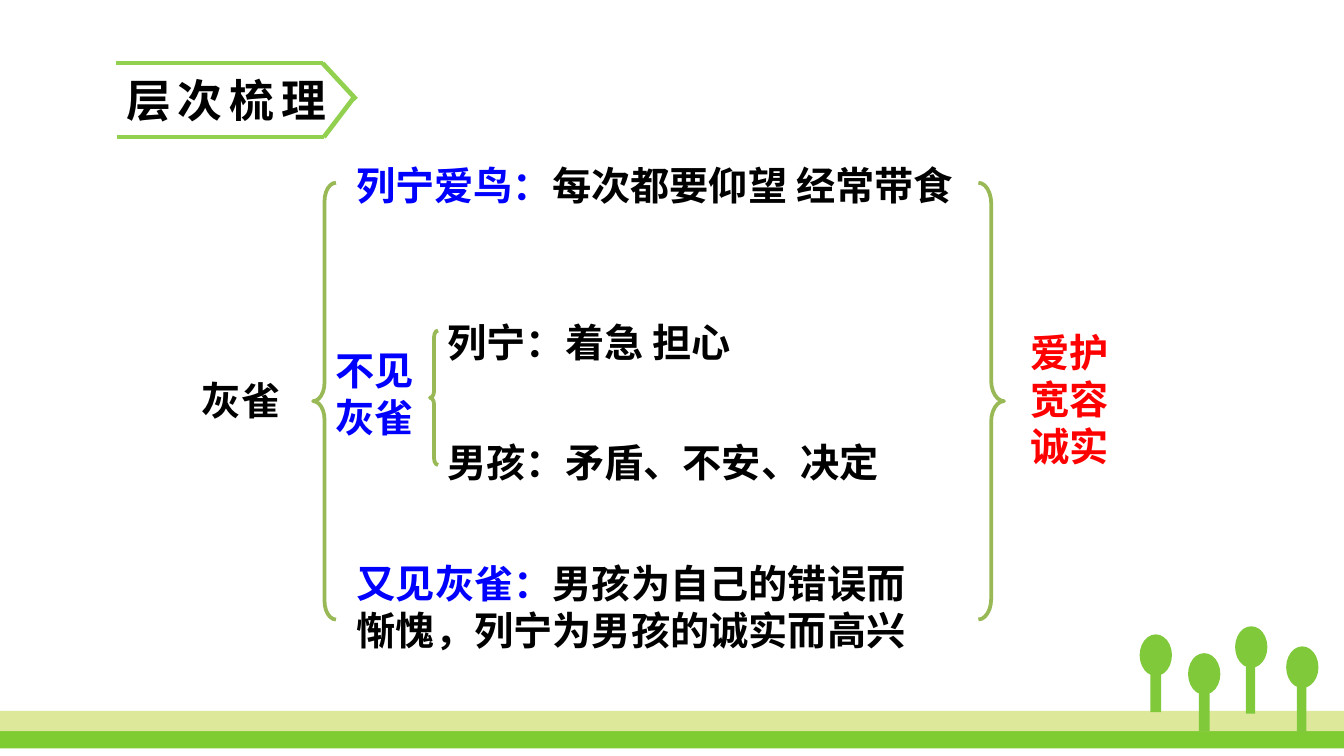
import pptx
import pptx.dml.color
import pptx.enum.shapes
import pptx.enum.text
import pptx.oxml
import pptx.oxml.ns
import pptx.util

Inches = pptx.util.Inches
Pt = pptx.util.Pt
SHAPES = pptx.enum.shapes.MSO_SHAPE
ALIGN = pptx.enum.text.PP_ALIGN
FONT = "Noto Sans CJK SC"
BLACK, BLUE, RED = "000000", "0000FF", "FF0000"
LIME, TREE_GREEN, BRACE_GREEN = "92D050", "80C93B", "98B955"

# Widescreen page, 16:9
deck = pptx.Presentation()
deck.slide_width = Inches(10)
deck.slide_height = Inches(10) * 9 // 16
page = deck.slides.add_slide(deck.slide_layouts[6])


def color(value):
    return pptx.dml.color.RGBColor.from_string(value)


def write(frame, paragraphs, paragraph_format, size=21):
    """Fill a text frame; each paragraph is a list of (text, colour) runs."""
    frame.word_wrap = True
    for index, runs in enumerate(paragraphs):
        para = frame.paragraphs[0] if index == 0 else frame.add_paragraph()
        for name, value in paragraph_format.items():
            setattr(para, name, value)
        for text, ink in runs:
            span = para.add_run()
            span.text = text
            for name, value in {"size": Pt(size), "bold": True, "name": FONT}.items():
                setattr(span.font, name, value)
            span.font.color.rgb = color(ink)
            east_asian = pptx.oxml.parse_xml(
                f'<a:ea {pptx.oxml.ns.nsdecls("a")} typeface="{FONT}"/>')
            span.font._element.append(east_asian)


# Ground bands and trees (crown left, crown top, trunk top, trunk width, trunk height)
scenery = [
    (SHAPES.RECTANGLE, 0, 5.44, 10, 0.13, "7FCB32"),
    (SHAPES.RECTANGLE, 0, 5.29, 10, 0.15, "DDE89A"),
]
for left, top, trunk_top, trunk_width, trunk_height in [
    (8.48, 4.72, 5.02, 0.08, 0.28),
    (8.84, 4.86, 5.16, 0.08, 0.28),
    (9.19, 4.66, 4.96, 0.07, 0.35),
    (9.57, 4.81, 5.10, 0.07, 0.35),
]:
    scenery.append((SHAPES.OVAL, left, top, 0.24, 0.31, TREE_GREEN))
    scenery.append((SHAPES.RECTANGLE, left + 0.08, trunk_top,
                    trunk_width, trunk_height, TREE_GREEN))
for kind, left, top, width, height, fill in scenery:
    shape = page.shapes.add_shape(
        kind, Inches(left), Inches(top), Inches(width), Inches(height))
    shape.shadow.inherit = False
    shape.fill.solid()
    shape.fill.fore_color.rgb = color(fill)
    shape.line.fill.background()

# Braces
for kind, left, top, width, height in [
    (SHAPES.LEFT_BRACE, 2.33, 1.36, 0.17, 3.25),
    (SHAPES.RIGHT_BRACE, 7.28, 1.36, 0.19, 3.25),
    (SHAPES.LEFT_BRACE, 3.2, 2.46, 0.06, 1),
]:
    brace = page.shapes.add_shape(
        kind, Inches(left), Inches(top), Inches(width), Inches(height))
    brace.shadow.inherit = False
    brace.fill.background()
    brace.line.color.rgb = color(BRACE_GREEN)
    brace.line.width = Pt(2)
    brace.adjustments[0] = 0.81
    brace.adjustments[1] = 0.5

# Outline texts
centered = {"alignment": ALIGN.CENTER}
spread = {"alignment": ALIGN.LEFT, "line_spacing": 1.3}
for left, top, width, height, paragraph_format, paragraphs in [
    (1.06, 2.76, 1.47, 0.43, centered, [[("灰雀", BLACK)]]),
    (2.47, 1.16, 4.8, 0.43, centered,
     [[("列宁爱鸟：", BLUE), ("每次都要仰望 经常带食", BLACK)]]),
    (2.35, 2.54, 0.88, 0.78, centered, [[("不见灰雀", BLUE)]]),
    (3.26, 2.22, 5.17, 1.45, spread,
     [[("列宁：着急 担心", BLACK)], [("男孩：矛盾、不安、决定", BLACK)]]),
    (2.42, 4.12, 4.55, 0.78, centered,
     [[("又见灰雀：", BLUE), ("男孩为自己的错误而", BLACK)],
      [("惭愧，列宁为男孩的诚实而高兴", BLACK)]]),
    (7.52, 2.4, 0.88, 1.14, centered, [[("爱护宽容诚实", RED)]]),
]:
    box = page.shapes.add_textbox(
        Inches(left), Inches(top), Inches(width), Inches(height))
    margins = {"margin_left": 0.07, "margin_right": 0.07,
               "margin_top": 0.04, "margin_bottom": 0.04}
    for name, value in margins.items():
        setattr(box.text_frame, name, Inches(value))
    write(box.text_frame, paragraphs, paragraph_format)
    if paragraph_format is spread:
        box.text_frame.paragraphs[1].space_before = Pt(32)

# Heading label
label = page.shapes.add_shape(
    SHAPES.RECTANGLE, Inches(0.84), Inches(0.49), Inches(1.84), Inches(0.5))
label.shadow.inherit = False
label.fill.background()
label.line.color.rgb = color("FFFFFF")
label.line.width = Pt(0.75)
write(label.text_frame, [[("层次梳理", BLACK)]], {"alignment": ALIGN.LEFT}, size=24)
label.text_frame.paragraphs[0].runs[0].font._element.set("spc", "380")

# Heading arrow outline
for start_x, start_y, end_x, end_y in [
    (0.86, 0.47, 2.4, 0.47),
    (0.87, 1.02, 2.41, 1.02),
    (2.4, 0.47, 2.65, 0.74),
    (2.41, 1.02, 2.63, 0.73),
]:
    edge = page.shapes.add_connector(
        pptx.enum.shapes.MSO_CONNECTOR.STRAIGHT,
        Inches(start_x), Inches(start_y), Inches(end_x), Inches(end_y))
    edge.line.color.rgb = color(LIME)
    edge.line.width = Pt(2.5)
    edge._element.spPr.append(
        pptx.oxml.parse_xml(f'<a:effectLst {pptx.oxml.ns.nsdecls("a")}/>'))

deck.save("out.pptx")
